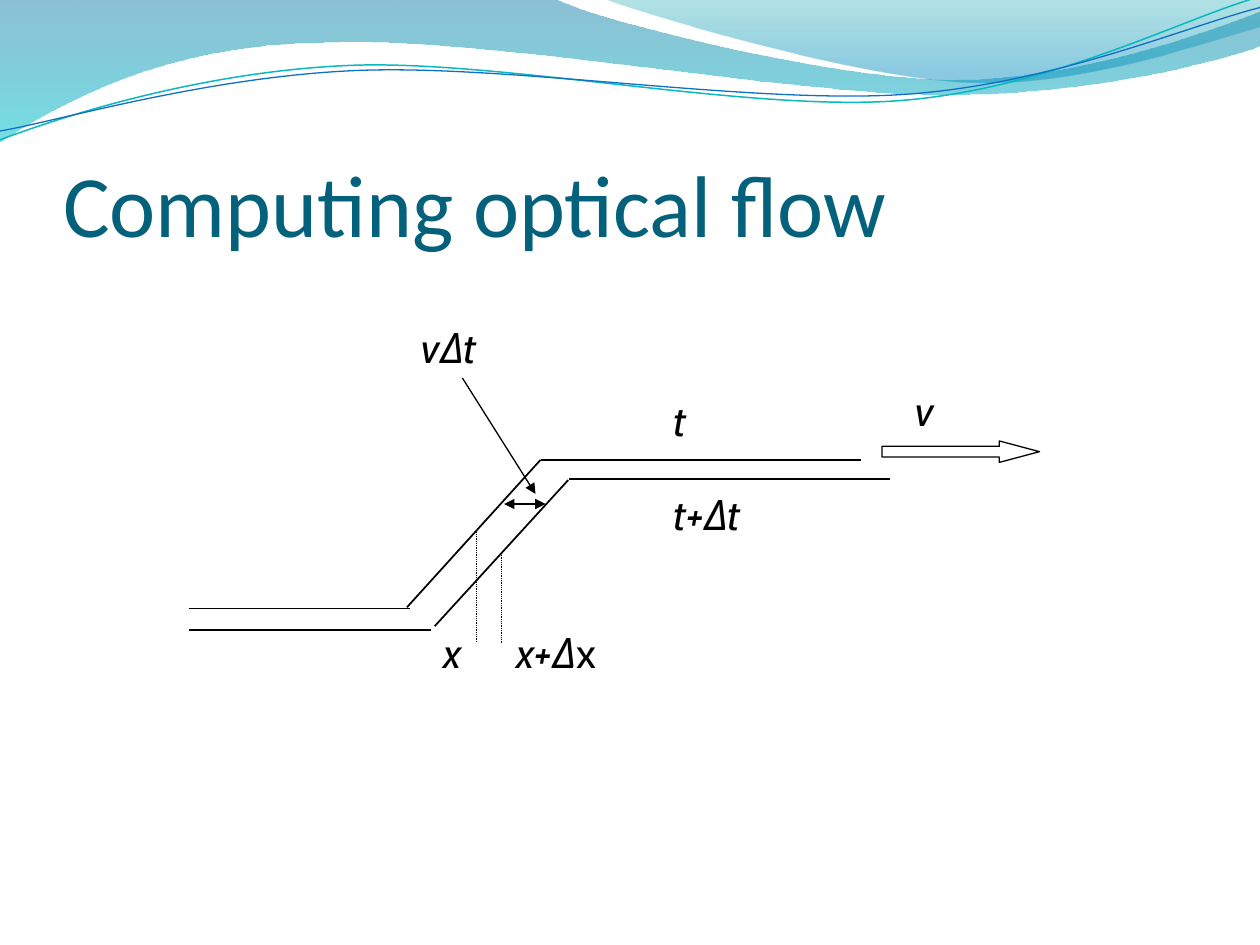
from dataclasses import dataclass
from lxml.etree import SubElement
from pptx import Presentation
from pptx.dml.color import RGBColor
from pptx.enum.dml import MSO_LINE
from pptx.enum.shapes import MSO_CONNECTOR, MSO_SHAPE
from pptx.enum.text import MSO_ANCHOR
from pptx.oxml.ns import qn
from pptx.util import Inches, Pt


@dataclass(frozen=True)
class Theme:
    ink: str = "000000"
    title: str = "04617B"
    teal: str = "0AB8BF"
    blue: str = "0F6FC6"
    # Gradient stops: place, colour, opacity in percent
    band: tuple = ((0, "0074A1", 45), (1, "00C6CF", 55))
    glow: tuple = ((0, "00A1A9", 30), (0.8, "008BBF", 45))
    head: str = "Calibri"
    body: str = "Cabin"
    big: int = 50
    small: int = 24


class Board:
    def __init__(self, deck, theme):
        self.theme = theme
        self.slide = deck.slides.add_slide(deck.slide_layouts[6])
        self.shapes = self.slide.shapes

    def pen(self, line, color, width):
        line.color.rgb = RGBColor.from_string(color)
        line.width = Pt(width)

    def free(self, start, parts, closed):
        """A part is a line end (x, y) or a Bezier curve of three points."""
        flat = [Inches(v) for part in parts for v in part]
        path = self.shapes.build_freeform(*map(Inches, start))
        path.add_line_segments(list(zip(flat[::2], flat[1::2])), close=closed)
        shape = path.convert_to_shape()
        shape.shadow.inherit = False
        # Join each curve's three points into one Bezier segment
        legs = iter(list(shape._element.iter(qn("a:lnTo"))))
        for part in parts:
            first = next(legs)
            if len(part) == 6:
                bend = first.makeelement(qn("a:cubicBezTo"))
                first.addprevious(bend)
                for leg in (first, next(legs), next(legs)):
                    bend.append(leg[0])
                    leg.getparent().remove(leg)
        return shape

    def wave(self, start, parts, stops):
        shape = self.free(start, parts, True)
        shape.line.fill.background()
        shape.fill.gradient()
        shape.fill.gradient_angle = 270
        for stop, (place, color, alpha) in zip(shape.fill.gradient_stops, stops):
            stop.position = place
            stop.color.rgb = RGBColor.from_string(color)
        tints = shape._element.spPr.iter(qn("a:srgbClr"))
        for tint, (place, color, alpha) in zip(tints, stops):
            SubElement(tint, qn("a:alpha"), val=str(alpha * 1000))

    def curve(self, start, parts, color, width):
        shape = self.free(start, parts, False)
        shape.fill.background()
        self.pen(shape.line, color, width)

    def line(self, start, end, width=0.75, dots=False, tips=()):
        wire = self.shapes.add_connector(
            MSO_CONNECTOR.STRAIGHT, *(Inches(v) for v in start + end))
        self.pen(wire.line, self.theme.ink, width)
        if dots:
            wire.line.dash_style = MSO_LINE.ROUND_DOT
        frame = wire._element.spPr
        for tip in tips:
            SubElement(frame.find(qn("a:ln")), qn("a:" + tip), type="triangle")
        SubElement(frame, qn("a:effectLst"))

    def arrow(self, box):
        shape = self.shapes.add_shape(MSO_SHAPE.RIGHT_ARROW, *map(Inches, box))
        shape.shadow.inherit = False
        shape.adjustments[0] = 0.5
        shape.adjustments[1] = 1.875
        shape.fill.background()
        self.pen(shape.line, self.theme.ink, 0.75)

    def text(self, box, runs, font, size, color):
        frame = self.shapes.add_textbox(*map(Inches, box)).text_frame
        frame.word_wrap = True
        for words, slant in runs:
            run = frame.paragraphs[0].add_run()
            run.text = words
            run.font.name = font
            run.font.size = Pt(size)
            run.font.italic = slant
            run.font.color.rgb = RGBColor.from_string(color)
        return frame

    def title(self, box, words):
        th = self.theme
        frame = self.text(box, [(words, False)], th.head, th.big, th.title)
        frame.vertical_anchor = MSO_ANCHOR.BOTTOM
        frame.margin_left = frame.margin_right = frame.margin_bottom = 0

    def label(self, left, top, width, *runs):
        th = self.theme
        self.text((left, top, width, 0.5), runs, th.body, th.small, th.ink)


def main():
    deck = Presentation()
    deck.slide_width, deck.slide_height = Inches(10), Inches(7.5)
    theme = Theme()
    board = Board(deck, theme)

    # Wave banner
    board.wave((0, -0.01), (
        (4.4, -0.01), (4.76, 0.17, 6.64, 0.63, 7.58, 0.63),
        (8.53, 0.63, 9.58, 0.26, 10, 0.09), (10.01, 0.36),
        (9.83, 0.44, 8.7, 0.76, 7.46, 0.75), (6.22, 0.75, 3.82, 0.28, 2.57, 0.34),
        (1.29, 0.35, 0.46, 0.83, -0.01, 1.13), (0, -0.01)), theme.band)
    board.wave((4.79, -0.01), (
        (5.09, 0.11, 6.82, 0.62, 7.69, 0.65),
        (8.56, 0.69, 9.61, 0.32, 10, 0.21), (10, 0), (4.79, -0.01)), theme.glow)
    board.curve((0, 1.11), (
        (0.48, 0.93, 1.58, 0.57, 2.77, 0.52),
        (3.95, 0.47, 5.93, 0.89, 7.13, 0.8),
        (8.33, 0.71, 9.38, 0.15, 9.98, -0.02)), theme.teal, 0.85)
    board.curve((0, 1.04), (
        (0.47, 0.96, 1.64, 0.61, 2.83, 0.56),
        (4.03, 0.51, 5.97, 0.83, 7.17, 0.75),
        (8.36, 0.67, 9.41, 0.21, 10, 0.06)), theme.blue, 0.75)

    board.title((0.5, 0.77, 9.08, 1.25), "Computing optical flow")

    # Edge profile at both times: top, ramp and base
    for start, end, width in (
            ((4.29, 3.65), (6.83, 3.65), 1), ((4.52, 3.8), (7.06, 3.8), 1),
            ((3.23, 4.82), (4.29, 3.65), 1), ((3.45, 4.97), (4.51, 3.81), 1)):
        board.line(start, end, width)

    # Dotted drops to the x positions
    for x, top, end in ((3.78, 4.21, 5.09), (3.98, 4.39, 5.1)):
        board.line((x, top), (x, end), 0.5, dots=True)

    # Base of the profile
    for right, y in ((3.42, 5), (3.25, 4.83)):
        board.line((right, y), (1.5, y))

    # Labels at the edge
    board.label(5.25, 3.08, 0.58, ("t", True))
    board.label(5.25, 3.83, 1.33, ("t+Δt", True))
    board.label(4, 4.92, 1, ("x+Δ", True), ("x", False))
    board.label(3.42, 4.92, 0.58, ("x", True))

    # Shift between the ramps
    board.line((4, 4), (4.33, 4), tips=("headEnd", "tailEnd"))
    board.line((3.67, 3), (4.25, 3.92), tips=("tailEnd",))
    board.label(3.25, 2.5, 1.33, ("vΔt", True))

    # Direction of motion
    board.arrow((7, 3.5, 1.25, 0.17))
    board.label(7.17, 3, 1.33, ("v", True))

    deck.save("out.pptx")


if __name__ == "__main__":
    main()
